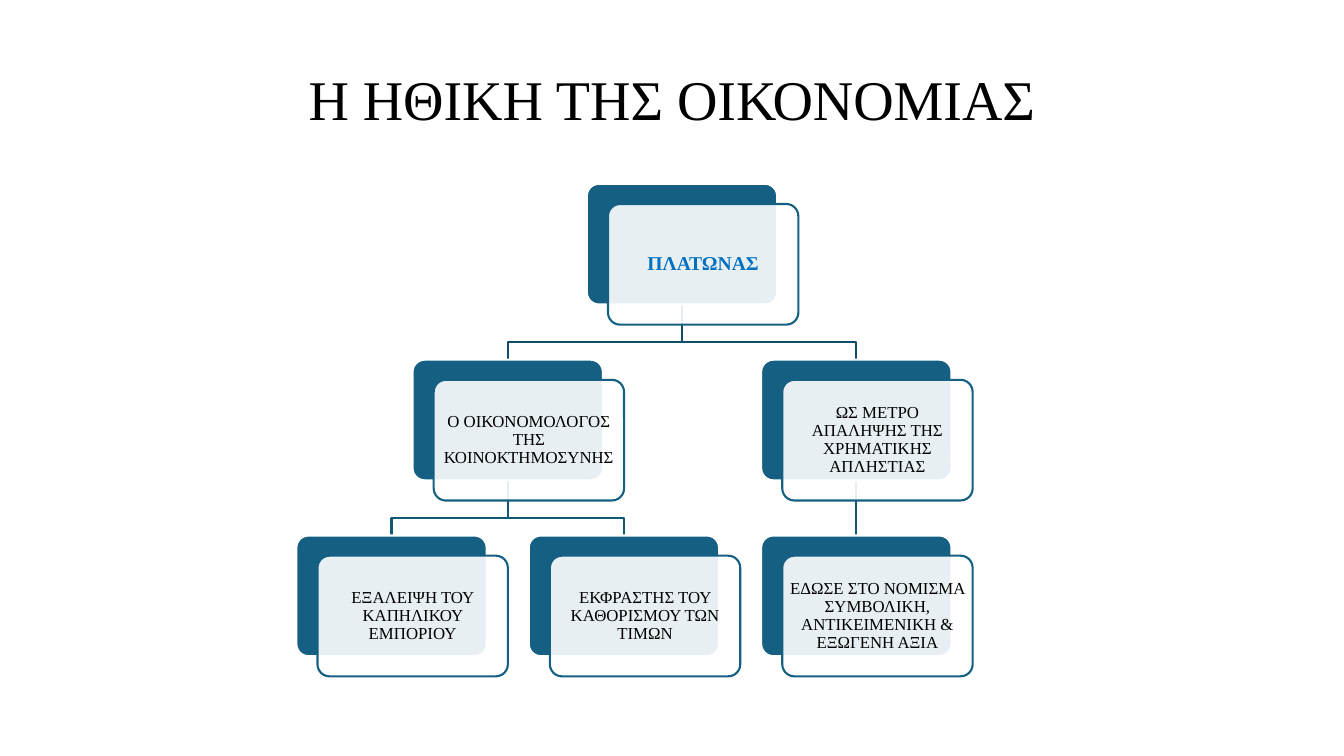
"""Build the slide on the ethics of the economy as a two-level hierarchy chart."""
from dataclasses import dataclass

from lxml import etree
from pptx import Presentation
from pptx import util as u
from pptx.dml.color import RGBColor
from pptx.enum import shapes, text
from pptx.oxml.ns import qn

COLORS = {"box": "156082", "card": "FFFFFF", "text": "000000", "root": "0070C0",
          "link1": "114D68", "link2": "135776"}
FONT = "Times New Roman"
LEFT, TOP, COL_STEP, ROW_STEP = 211.7, 131.3, 166, 125.6
BOX_W, BOX_H, SHIFT_X, SHIFT_Y = 136, 86.2, 15.1, 14.4
DROP = 26.9


@dataclass(frozen=True)
class Node:
    """One box of the hierarchy, placed by column and row."""
    label: str
    col: float
    row: int
    parent: int | None = None
    size: int = 12
    color: str = "text"
    bold: bool = False

    @property
    def x(self) -> float:
        """Return the left edge in points."""
        return LEFT + self.col * COL_STEP

    @property
    def y(self) -> float:
        """Return the top edge in points."""
        return TOP + self.row * ROW_STEP

    @property
    def mid(self) -> float:
        """Return the horizontal middle in points."""
        return self.x + BOX_W / 2


NODES = [
    Node("ΠΛΑΤΩΝΑΣ", 1.25, 0, size=14, color="root", bold=True),
    Node("Ο ΟΙΚΟΝΟΜΟΛΟΓΟΣ ΤΗΣ ΚΟΙΝΟΚΤΗΜΟΣΥΝΗΣ", 0.5, 1, 0),
    Node("ΕΞΑΛΕΙΨΗ ΤΟΥ ΚΑΠΗΛΙΚΟΥ ΕΜΠΟΡΙΟΥ", 0, 2, 1),
    Node("ΕΚΦΡΑΣΤΗΣ ΤΟΥ ΚΑΘΟΡΙΣΜΟΥ ΤΩΝ ΤΙΜΩΝ", 1, 2, 1),
    Node("ΩΣ ΜΕΤΡΟ ΑΠΑΛΗΨΗΣ ΤΗΣ ΧΡΗΜΑΤΙΚΗΣ ΑΠΛΗΣΤΙΑΣ", 2, 1, 0),
    Node("ΕΔΩΣΕ ΣΤΟ ΝΟΜΙΣΜΑ ΣΥΜΒΟΛΙΚΗ, ΑΝΤΙΚΕΙΜΕΝΙΚΗ & ΕΞΩΓΕΝΗ ΑΞΙΑ", 2, 2, 4),
]


def rgb(name: str) -> RGBColor:
    """Return a named colour."""
    return RGBColor.from_string(COLORS[name])


def set_line(sp, color: str) -> None:
    """Give a shape or connector its outline."""
    sp.line.color.rgb = rgb(color)
    sp.line.width = u.Pt(1.5)


def write(tf, label: str, size: int, color: str, bold: bool = False) -> None:
    """Write one centred paragraph."""
    tf.word_wrap = True
    p = tf.paragraphs[0]
    p.text = label
    p.alignment = text.PP_ALIGN.CENTER
    p.line_spacing = 0.9
    p.font.name = FONT
    p.font.size = u.Pt(size)
    p.font.bold = bold
    p.font.color.rgb = rgb(color)


def add_box(s, x: float, y: float, fill: str, line: str):
    """Add a rounded box of the common size."""
    sp = s.shapes.add_shape(shapes.MSO_SHAPE.ROUNDED_RECTANGLE,
                            u.Pt(x), u.Pt(y), u.Pt(BOX_W), u.Pt(BOX_H))
    sp.shadow.inherit = False
    sp.adjustments[0] = 0.1
    sp.fill.solid()
    sp.fill.fore_color.rgb = rgb(fill)
    set_line(sp, line)
    return sp


def add_node(s, node: Node):
    """Add a back box with its translucent card and return the back box."""
    back = add_box(s, node.x, node.y, "box", "card")
    card = add_box(s, node.x + SHIFT_X, node.y + SHIFT_Y, "card", "box")
    clr = card.fill._xPr.find(qn("a:solidFill"))[0]
    etree.SubElement(clr, qn("a:alpha")).set("val", "90000")
    tf = card.text_frame
    tf.vertical_anchor = text.MSO_ANCHOR.MIDDLE
    tf.margin_left = tf.margin_right = tf.margin_top = tf.margin_bottom = u.Pt(1.1)
    write(tf, node.label, node.size, node.color, node.bold)
    return back


def add_link(s, parent: Node, child: Node, parent_box, child_box) -> None:
    """Join a parent to its child, behind the boxes."""
    bottom = parent.y + BOX_H
    if parent.col == child.col:
        sp = s.shapes.add_connector(shapes.MSO_CONNECTOR.STRAIGHT, u.Pt(parent.mid),
                                    u.Pt(bottom), u.Pt(child.mid), u.Pt(child.y))
        sp.begin_connect(parent_box, 2)
        sp.end_connect(child_box, 0)
        etree.SubElement(sp._element.spPr, qn("a:effectLst"))
    else:
        points = [(parent.mid, bottom + DROP), (child.mid, bottom + DROP),
                  (child.mid, child.y)]
        fb = s.shapes.build_freeform(u.Pt(parent.mid), u.Pt(bottom))
        fb.add_line_segments([(u.Pt(x), u.Pt(y)) for x, y in points], close=False)
        sp = fb.convert_to_shape()
        sp.shadow.inherit = False
        sp.fill.background()
    set_line(sp, f"link{child.row}")
    s.shapes._spTree.insert(2, sp._element)


def main() -> None:
    """Build and save the slide."""
    prs = Presentation()
    prs.slide_width, prs.slide_height = u.Pt(960), u.Pt(540)
    s = prs.slides.add_slide(prs.slide_layouts[6])
    boxes = [add_node(s, node) for node in NODES]
    for node, box in zip(NODES, boxes):
        if node.parent is not None:
            add_link(s, NODES[node.parent], node, boxes[node.parent], box)
    title = s.shapes.add_textbox(u.Pt(120), u.Pt(27.4), u.Pt(720), u.Pt(70.6))
    title.text_frame.vertical_anchor = text.MSO_ANCHOR.BOTTOM
    write(title.text_frame, "Η ΗΘΙΚΗ ΤΗΣ ΟΙΚΟΝΟΜΙΑΣ", 40, "text")
    prs.save("out.pptx")


if __name__ == "__main__":
    main()
